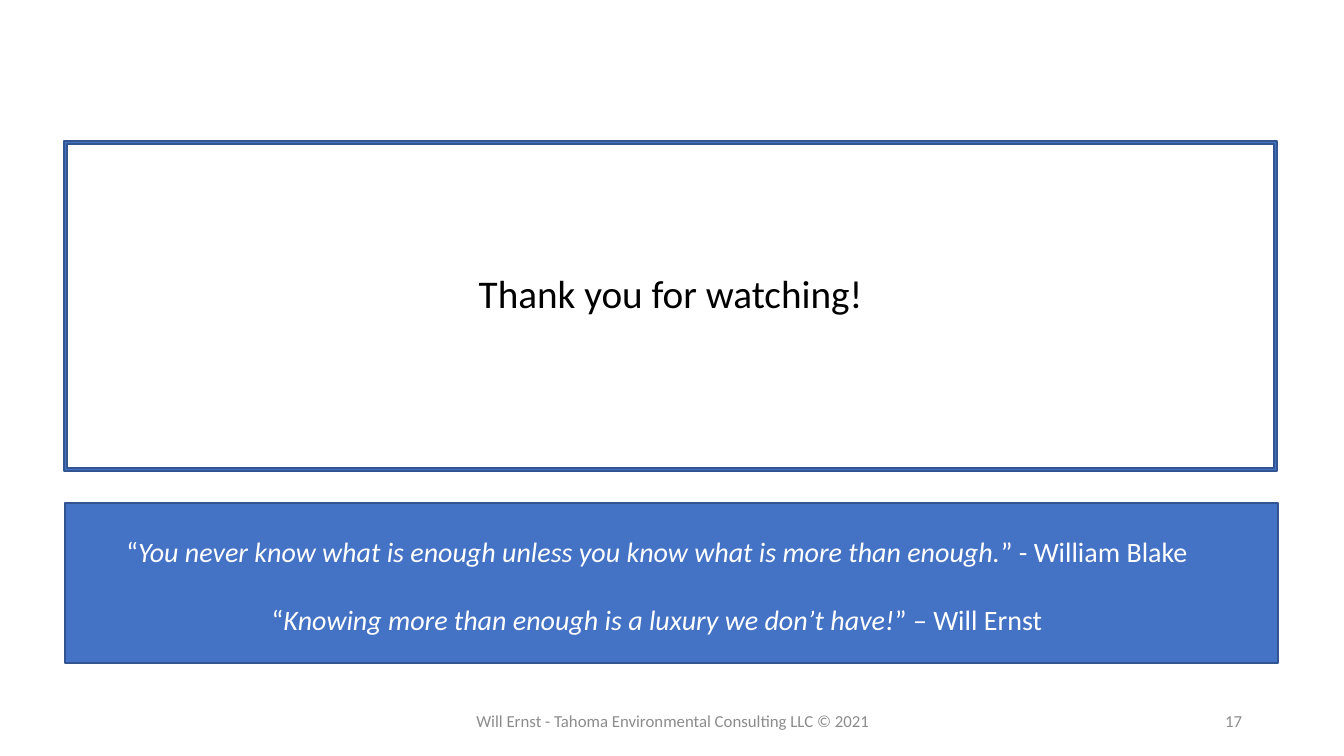
import pptx
import pptx.util
import pptx.dml.color
import pptx.enum.shapes
import pptx.enum.text

RGB = pptx.dml.color.RGBColor
SHAPE = pptx.enum.shapes.MSO_SHAPE
ALIGN = pptx.enum.text.PP_ALIGN
ANCHOR = pptx.enum.text.MSO_ANCHOR

BLUE = RGB(0x44, 0x72, 0xC4)
EDGE = RGB(0x32, 0x54, 0x91)
BLACK = RGB(0, 0, 0)
WHITE = RGB(255, 255, 255)
GRAY = RGB(0x8C, 0x8C, 0x8C)

# Each paragraph is a list of (text, italic) runs
THANKS = [[("Thank you for watching!", False)]]
QUOTES = [
    [("“", False),
     ("You never know what is enough unless you know what is more than enough.", True),
     ("” - William Blake", False)],
    [("“", False),
     ("Knowing more than enough is a luxury we don’t have!", True),
     ("” – Will Ernst", False)],
]
FOOTER = [[("Will Ernst - Tahoma Environmental Consulting LLC © 2021", False)]]
PAGE = [[("17", False)]]

# kind, box in px (left, top, width, height)
PANELS = [
    (SHAPE.FRAME, (64, 141, 1213, 330)),
    (SHAPE.RECTANGLE, (65, 503, 1213, 160)),
]
FRAME_THICKNESS = 0.009

# paragraphs, box in px, size in pt, colour, alignment, anchor
TEXTS = [
    (THANKS, (91, 263, 1159, 60), 28, BLACK, ALIGN.CENTER, ANCHOR.MIDDLE),
    (QUOTES, (65, 530, 1184, 112), 20, WHITE, ALIGN.CENTER, ANCHOR.TOP),
    (FOOTER, (446, 701, 454, 40), 12, GRAY, ALIGN.CENTER, ANCHOR.MIDDLE),
    (PAGE, (950, 701, 302, 40), 12, GRAY, ALIGN.RIGHT, ANCHOR.MIDDLE),
]
QUOTE_GAP = 24.4


def px(n):
    return round(n * 914400 / 100.8)


def add_panel(s, kind, box):
    sp = s.shapes.add_shape(kind, *map(px, box))
    sp.shadow.inherit = False
    sp.fill.solid()
    sp.fill.fore_color.rgb = BLUE
    sp.line.color.rgb = EDGE
    sp.line.width = pptx.util.Pt(1)
    if kind == SHAPE.FRAME:
        sp.adjustments[0] = FRAME_THICKNESS


def add_text(s, paragraphs, box, size, color, align, anchor):
    tf = s.shapes.add_textbox(*map(px, box)).text_frame
    tf.word_wrap = True
    tf.vertical_anchor = anchor
    for i, runs in enumerate(paragraphs):
        p = tf.add_paragraph() if i else tf.paragraphs[0]
        p.alignment = align
        if i:
            p.space_before = pptx.util.Pt(QUOTE_GAP)
        for text, italic in runs:
            r = p.add_run()
            r.text = text
            font = {"name": "Calibri", "size": pptx.util.Pt(size), "italic": italic}
            for key, value in font.items():
                setattr(r.font, key, value)
            r.font.color.rgb = color


def main():
    prs = pptx.Presentation()
    prs.slide_width, prs.slide_height = px(1344), px(756)
    s = prs.slides.add_slide(prs.slide_layouts[6])
    for panel in PANELS:
        add_panel(s, *panel)
    for text in TEXTS:
        add_text(s, *text)
    prs.save("out.pptx")


if __name__ == "__main__":
    main()
